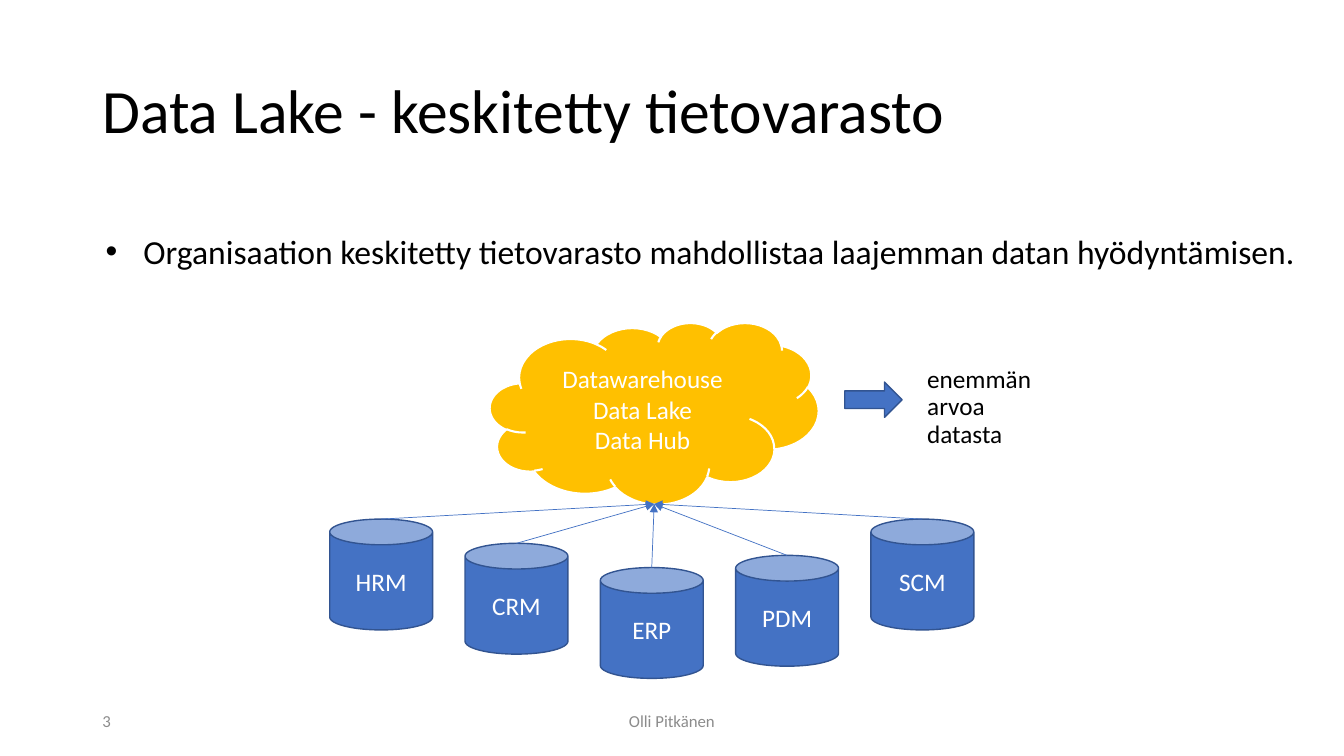
"""Build a slide on the data lake as a central data store."""
from lxml.etree import SubElement
from pptx import Presentation
from pptx.dml.color import RGBColor
from pptx.enum.shapes import MSO_CONNECTOR as Connector, MSO_SHAPE as Shape
from pptx.enum.text import MSO_ANCHOR as Anchor, PP_ALIGN as Align
from pptx.oxml.ns import qn
from pptx.util import Pt

COLORS = {
    "text": "000000",
    "footer": "8C8C8C",
    "white": "FFFFFF",
    "blue": "4472C4",
    "edge": "325491",
    "cloud": "FFC000",
}
SYSTEMS = [("HRM", 370.8), ("CRM", 388.1), ("ERP", 405.4), ("PDM", 396.7), ("SCM", 370.8)]
CAN_LEFT, CAN_STEP, CAN_WIDTH, CAN_HEIGHT = 235.5, 96.65, 73.5, 79.2
CLOUD_BOTTOM = (467.3, 360)


def color(name):
    """Return the named colour."""
    return RGBColor.from_string(COLORS[name])


def write(frame, text, size, ink, align=Align.LEFT, anchor=Anchor.MIDDLE):
    """Put one formatted paragraph into a text frame."""
    frame.word_wrap = True
    frame.vertical_anchor = anchor
    para = frame.paragraphs[0]
    para.text = text
    para.alignment = align
    for span in para.runs:
        span.font.name = "Calibri"
        span.font.size = Pt(size)
        span.font.color.rgb = color(ink)
    return para


def add_text(page, area, text, size, ink="text", **layout):
    """Add a text box and return its paragraph."""
    box = page.shapes.add_textbox(*map(Pt, area))
    return write(box.text_frame, text, size, ink, **layout)


def add_bullet(page, area, text, size):
    """Add a single unwrapped bullet line."""
    para = add_text(page, area, text, size, anchor=Anchor.TOP)
    properties = para._p.get_or_add_pPr()
    properties.set("marL", str(Pt(27)))
    properties.set("indent", str(-Pt(27)))
    SubElement(properties, qn("a:buFont"), typeface="Arial")
    SubElement(properties, qn("a:buChar"), char="•")
    para._parent.word_wrap = False


def add_figure(page, kind, area, fill, edge, weight, text=""):
    """Add a filled, outlined shape with centred white text."""
    figure = page.shapes.add_shape(kind, *map(Pt, area))
    figure.shadow.inherit = False
    figure.fill.solid()
    figure.fill.fore_color.rgb = color(fill)
    figure.line.color.rgb = color(edge)
    figure.line.width = Pt(weight)
    if text:
        write(figure.text_frame, text, 18, "white", Align.CENTER)


def add_arrow(page, start, end):
    """Add a thin arrow between two points."""
    arrow = page.shapes.add_connector(Connector.STRAIGHT, *map(Pt, start + end))
    arrow.line.color.rgb = color("blue")
    arrow.line.width = Pt(0.5)
    SubElement(arrow.line._get_or_add_ln(), qn("a:tailEnd"), type="triangle")
    SubElement(arrow._element.spPr, qn("a:effectLst"))


def main():
    """Build and save the deck."""
    deck = Presentation()
    deck.slide_width, deck.slide_height = Pt(960), Pt(540)
    page = deck.slides.add_slide(deck.slide_layouts[6])

    title = add_text(page, (66, 28.8, 828, 104.4), "Data Lake - keskitetty tietovarasto", 44)
    title.line_spacing = 0.9
    value = add_text(page, (655.2, 258.5, 109.4, 74.9), "enemmän arvoa datasta", 18, anchor=Anchor.TOP)
    value.line_spacing = 0.9
    add_text(page, (318, 500.5, 324, 28.8), "Olli Pitkänen", 12, "footer", align=Align.CENTER)
    add_text(page, (66, 500.5, 216, 28.8), "3", 12, "footer")

    for index, (name, top) in enumerate(SYSTEMS):
        left = CAN_LEFT + index * CAN_STEP
        add_figure(page, Shape.CAN, (left, top, CAN_WIDTH, CAN_HEIGHT), "blue", "edge", 1, name)
    add_figure(page, Shape.CLOUD, (350, 230.4, 234.7, 129.6), "cloud", "white", 1.5,
               "Datawarehouse\nData Lake\nData Hub")
    for index, (name, top) in enumerate(SYSTEMS):
        middle = CAN_LEFT + index * CAN_STEP + CAN_WIDTH / 2
        add_arrow(page, (middle, top), CLOUD_BOTTOM)
    add_figure(page, Shape.RIGHT_ARROW, (603.4, 272.9, 41, 25.2), "blue", "edge", 1)

    add_bullet(page, (68.4, 161.3, 871.9, 36),
               "Organisaation keskitetty tietovarasto mahdollistaa laajemman datan hyödyntämisen.", 24)
    deck.save("out.pptx")


if __name__ == "__main__":
    main()
